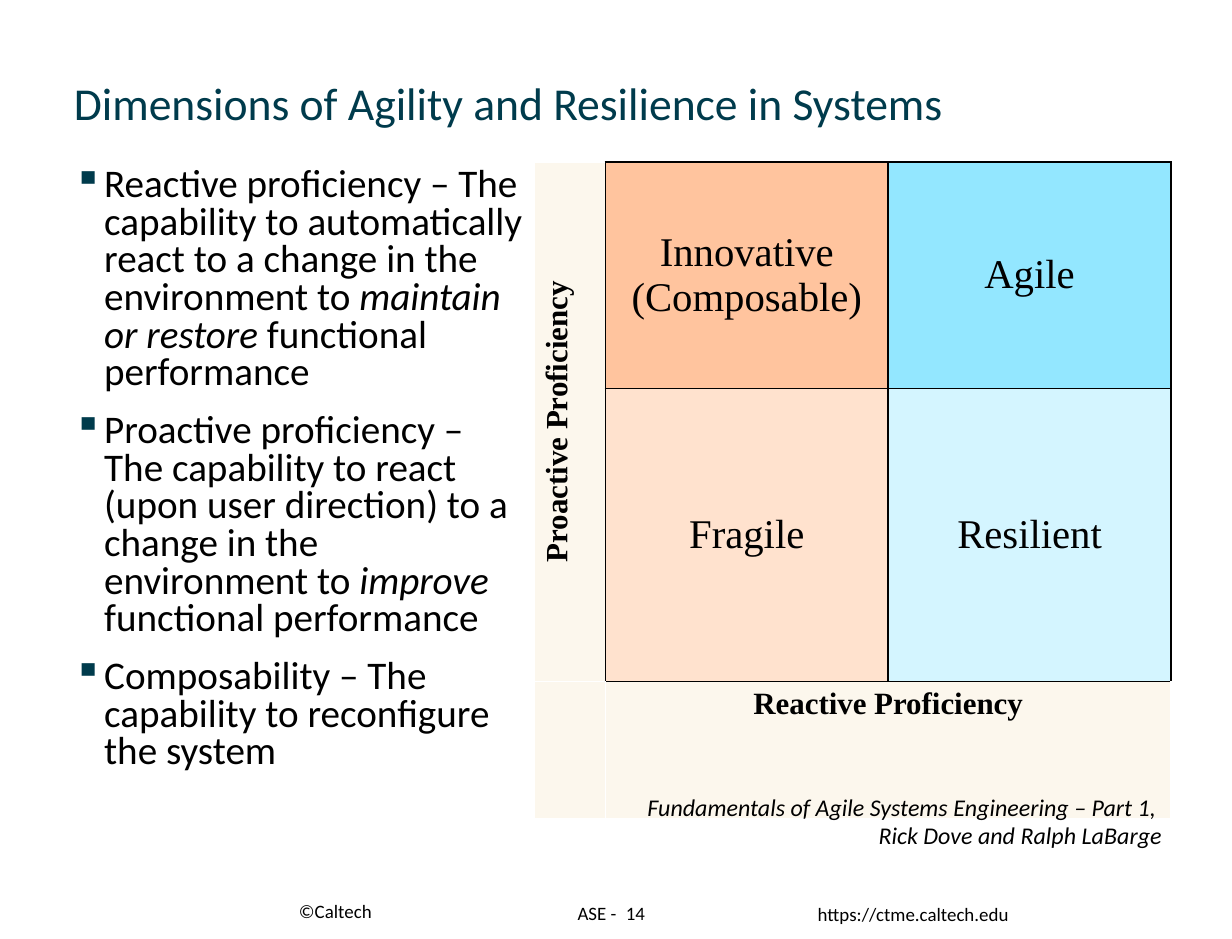
from pptx import Presentation
from pptx.dml.color import RGBColor
from pptx.enum.text import MSO_ANCHOR, PP_ALIGN
from pptx.oxml.ns import qn
from pptx.util import Inches, Pt
from lxml import etree

TOP, MIDDLE, BOTTOM = MSO_ANCHOR.TOP, MSO_ANCHOR.MIDDLE, MSO_ANCHOR.BOTTOM
LEFT, CENTER, RIGHT = PP_ALIGN.LEFT, PP_ALIGN.CENTER, PP_ALIGN.RIGHT

COLORS = {"teal": "003B4C", "black": "000000", "white": "FFFFFF", "cream": "FCF7ED",
          "orange": "FFC49E", "peach": "FFE2CE", "blue": "93E7FF", "ice": "D4F5FF"}
SANS, SERIF = "Calibri", "Times New Roman"
WIDTH, HEIGHT = 10.5, 8
MARGIN, CONTENT_TOP = 0.53, 1.38

TITLE = "Dimensions of Agility and Resilience in Systems"
# Each bullet is a list of (text, italic) spans.
BULLETS = [
    [("Reactive proficiency – The capability to automatically react to a change "
      "in the environment to ", False),
     ("maintain or restore ", True), ("functional performance", False)],
    [("Proactive proficiency – The capability to react (upon user direction) to a "
      "change in the environment to ", False),
     ("improve", True), (" functional performance", False)],
    [("Composability – The capability to reconfigure the system", False)],
]
COLUMNS, ROWS = [0.61, 2.41, 2.41], [1.93, 1.93, 1.17]
MATRIX = [
    [("Proactive Proficiency", "cream"), ("Innovative (Composable)", "orange"), ("Agile", "blue")],
    [("", "cream"), ("Fragile", "peach"), ("Resilient", "ice")],
    [("", "cream"), ("Reactive Proficiency", "cream"), ("", "cream")],
]
CITATION = "Fundamentals of Agile Systems Engineering – Part 1, \vRick Dove and Ralph LaBarge"
FOOTER_TOP = 7.64
# text, left, top, width, height, size, italic, alignment, anchor
LABELS = [
    ("©Caltech", 2.45, FOOTER_TOP, 1.23, 0.27, 11.6, False, LEFT, BOTTOM),
    ("ASE - ", 3.99, FOOTER_TOP, 1.4, 0.27, 11.6, False, RIGHT, MIDDLE),
    (" 14", 5.2, FOOTER_TOP, 0.7, 0.27, 11.6, False, LEFT, MIDDLE),
    ("https://ctme.caltech.edu", 6.87, FOOTER_TOP, 2.12, 0.3, 11.6, False, LEFT, TOP),
    (CITATION, 4.75, 6.7, 5.25, 0.6, 14.7, True, RIGHT, TOP),
]


def style(font, size, name=SANS, color="black", bold=False, italic=False):
    font.size, font.name, font.bold, font.italic = Pt(size), name, bold, italic
    font.color.rgb = RGBColor.from_string(COLORS[color])


def add_box(page, left, top, width, height, anchor=TOP):
    box = page.shapes.add_textbox(*map(Inches, (left, top, width, height)))
    box.text_frame.word_wrap = True
    box.text_frame.vertical_anchor = anchor
    return box.text_frame


def add_bullet(para):
    props = para._p.get_or_add_pPr()
    props.set("marL", str(Inches(0.26)))
    props.set("indent", str(-Inches(0.26)))
    color = etree.SubElement(props, qn("a:buClr"))
    etree.SubElement(color, qn("a:srgbClr"), val=COLORS["teal"])
    etree.SubElement(props, qn("a:buChar"), char="▪")


def set_borders(cell, colors):
    """Draw 1 pt cell borders from a dict of side letter to colour name."""
    props = cell._tc.get_or_add_tcPr()
    for side in "LRTB":
        line = etree.SubElement(props, qn(f"a:ln{side}"), w=str(Pt(1)))
        fill = etree.SubElement(line, qn("a:solidFill"))
        etree.SubElement(fill, qn("a:srgbClr"), val=COLORS[colors[side]])


def add_title(page):
    title = page.shapes.title
    title.left, title.top, title.width, title.height = map(Inches, (MARGIN, 0.09, 9.45, 1.07))
    frame = title.text_frame
    frame.text = TITLE
    frame.vertical_anchor = BOTTOM
    para = frame.paragraphs[0]
    para.alignment, para.line_spacing = LEFT, 0.9
    style(para.runs[0].font, 28, color="teal")


def add_definitions(page):
    frame = add_box(page, MARGIN, CONTENT_TOP, 4.03, 5.88)
    for index, spans in enumerate(BULLETS):
        para = frame.add_paragraph() if index else frame.paragraphs[0]
        para.line_spacing = 0.8
        para.space_before = Pt(12.6 if index else 0)
        add_bullet(para)
        for text, italic in spans:
            span = para.add_run()
            span.text = text
            style(span.font, 24, italic=italic)


def add_matrix(page):
    size = map(Inches, (4.55, CONTENT_TOP, sum(COLUMNS), sum(ROWS)))
    table = page.shapes.add_table(len(ROWS), len(COLUMNS), *size).table
    table.first_row = table.horz_banding = False
    for column, width in zip(table.columns, COLUMNS):
        column.width = Inches(width)
    for row, height in zip(table.rows, ROWS):
        row.height = Inches(height)
    table.cell(0, 0).merge(table.cell(1, 0))
    table.cell(2, 1).merge(table.cell(2, 2))

    for r, row in enumerate(MATRIX):
        for c, (text, color) in enumerate(row):
            cell = table.cell(r, c)
            side_axis, base_axis = c == 0, r == len(ROWS) - 1
            on_axis = side_axis or base_axis
            borders = dict.fromkeys("LRTB", "white" if on_axis else "black")
            if side_axis != base_axis:  # the edge that faces the quadrants
                borders["R" if side_axis else "T"] = "black"
            set_borders(cell, borders)
            cell.fill.solid()
            cell.fill.fore_color.rgb = RGBColor.from_string(COLORS[color])
            if not text:
                continue
            cell.text_frame.text = text
            cell.vertical_anchor = BOTTOM if side_axis else TOP if base_axis else MIDDLE
            if side_axis:
                cell._tc.get_or_add_tcPr().set("vert", "vert270")
            para = cell.text_frame.paragraphs[0]
            para.alignment = CENTER
            style(para.runs[0].font, 19 if on_axis else 25, SERIF, bold=on_axis)


def add_labels(page):
    for text, left, top, width, height, size, italic, alignment, anchor in LABELS:
        frame = add_box(page, left, top, width, height, anchor)
        frame.text = text
        para = frame.paragraphs[0]
        para.alignment = alignment
        for span in para.runs:
            style(span.font, size, italic=italic)


def main():
    deck = Presentation()
    deck.slide_width, deck.slide_height = Inches(WIDTH), Inches(HEIGHT)
    page = deck.slides.add_slide(deck.slide_layouts.get_by_name("Title Only"))
    add_title(page)
    add_definitions(page)
    add_matrix(page)
    add_labels(page)
    deck.save("out.pptx")


if __name__ == "__main__":
    main()
